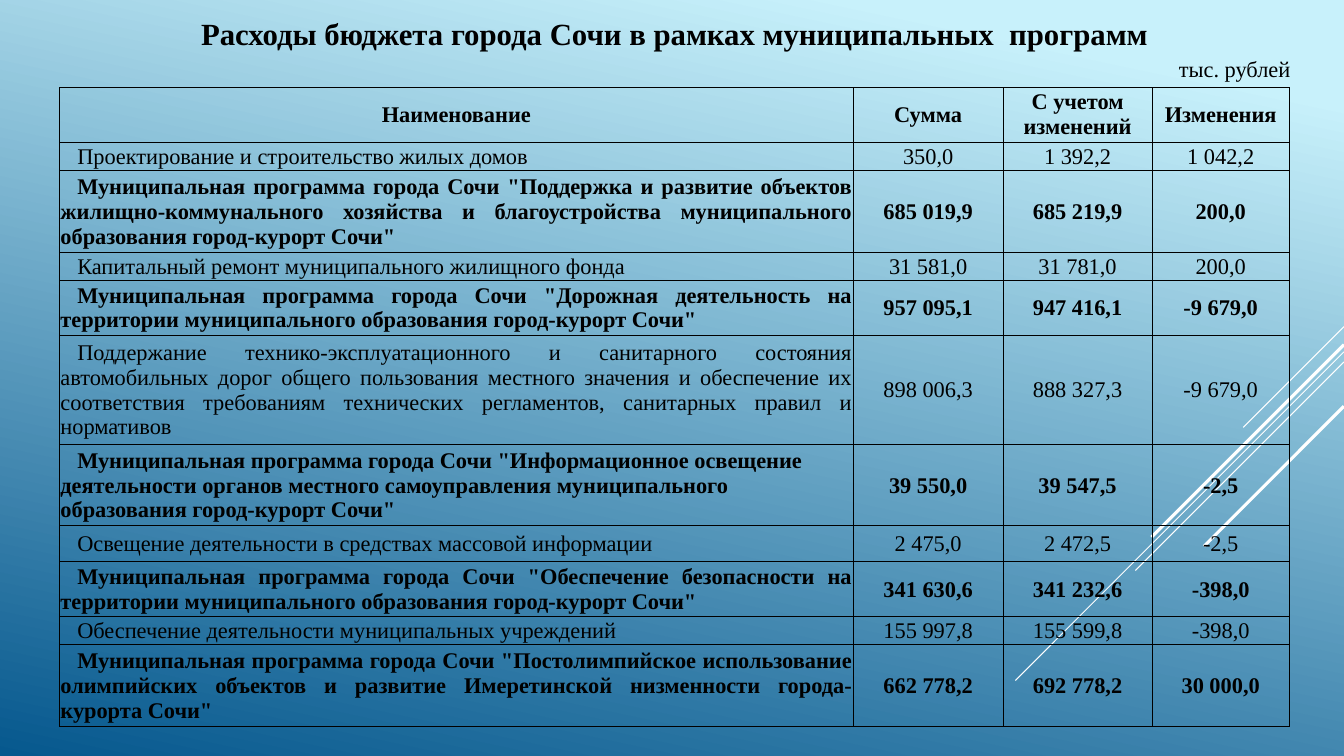
from dataclasses import dataclass

from lxml.etree import SubElement
from pptx import Presentation
from pptx.dml.color import RGBColor
from pptx.enum.shapes import MSO_CONNECTOR
from pptx.enum.text import MSO_ANCHOR, PP_ALIGN as Align
from pptx.oxml.ns import qn
from pptx.util import Pt


@dataclass(frozen=True)
class Theme:
    font: str = "Times New Roman"
    text: str = "000000"
    ray: str = "FFFFFF"
    sky: str = "C8F1FB"
    sea: str = "06588E"
    title_size: int = 22
    body_size: int = 16
    border: float = 0.5


THEME = Theme()
WIDTH, HEIGHT = 960, 540
COLUMNS = [567, 107, 106.5, 98]
HEADER = ["Наименование", "Сумма", "С учетом изменений", "Изменения"]
HEADER_HEIGHT = 39.3
RAYS = [(233.3, 72, 0.75), (251.3, 234.7, 0.75), (258.5, 149, 0.75),
        (246.2, 137.5, 2.25), (290.2, 100, 2.25)]
L, J = Align.LEFT, Align.JUSTIFY
ROWS = [
    (20, L, False, "Проектирование и строительство жилых домов",
     "350,0", "1 392,2", "1 042,2"),
    (58, J, True, 'Муниципальная программа города Сочи "Поддержка и развитие объектов '
     'жилищно-коммунального хозяйства и благоустройства муниципального '
     'образования город-курорт Сочи"', "685 019,9", "685 219,9", "200,0"),
    (20, J, False, "Капитальный ремонт муниципального жилищного фонда",
     "31 581,0", "31 781,0", "200,0"),
    (39.3, J, True, 'Муниципальная программа города Сочи "Дорожная деятельность на '
     'территории муниципального образования город-курорт Сочи"',
     "957 095,1", "947 416,1", "-9 679,0"),
    (78, J, False, "Поддержание технико-эксплуатационного и санитарного состояния "
     "автомобильных дорог общего пользования местного значения и обеспечение их "
     "соответствия требованиям технических регламентов, санитарных правил и "
     "нормативов", "898 006,3", "888 327,3", "-9 679,0"),
    (58, L, True, 'Муниципальная программа города Сочи "Информационное освещение '
     'деятельности органов местного самоуправления муниципального '
     'образования город-курорт Сочи"', "39 550,0", "39 547,5", "-2,5"),
    (25.7, L, False, "Освещение деятельности в средствах массовой информации",
     "2 475,0", "2 472,5", "-2,5"),
    (39.3, J, True, 'Муниципальная программа города Сочи "Обеспечение безопасности на '
     'территории муниципального образования город-курорт Сочи"',
     "341 630,6", "341 232,6", "-398,0"),
    (20, J, False, "Обеспечение деятельности муниципальных учреждений",
     "155 997,8", "155 599,8", "-398,0"),
    (58, J, True, 'Муниципальная программа города Сочи "Постолимпийское использование '
     'олимпийских объектов и развитие Имеретинской низменности города-курорта Сочи"',
     "662 778,2", "692 778,2", "30 000,0"),
]


def rgb(value):
    return RGBColor.from_string(value)


def write(tf, text, size, bold=False, align=Align.LEFT):
    tf.word_wrap = True
    p = tf.paragraphs[0]
    p.text = text
    p.alignment = align
    p.font.name = THEME.font
    p.font.size = Pt(size)
    p.font.bold = bold
    p.font.color.rgb = rgb(THEME.text)
    return p


def paint_background(s):
    fill = s.background.fill
    fill.gradient()
    fill.gradient_angle = 258
    stops = zip(fill.gradient_stops, [(0.1, THEME.sky), (1, THEME.sea)])
    for stop, (position, color) in stops:
        stop.position = position
        stop.color.rgb = rgb(color)


def add_ray(s, top, reach, weight):
    ray = s.shapes.add_connector(MSO_CONNECTOR.STRAIGHT, Pt(WIDTH), Pt(top),
                                 Pt(WIDTH - reach), Pt(top + reach))
    ray.line.color.rgb = rgb(THEME.ray)
    ray.line.width = Pt(weight)
    SubElement(ray._element.spPr, qn("a:effectLst"))


def set_title(s, text):
    title = s.shapes.title
    title.left, title.top, title.width, title.height = Pt(135.4), Pt(6.5), Pt(692.6), Pt(34)
    title.text_frame.vertical_anchor = MSO_ANCHOR.MIDDLE
    write(title.text_frame, text, THEME.title_size, True, Align.CENTER)


def add_label(s, text, left, top, width, height):
    box = s.shapes.add_textbox(Pt(left), Pt(top), Pt(width), Pt(height))
    write(box.text_frame, text, THEME.body_size)


def add_borders(cell):
    tc_pr = cell._tc.get_or_add_tcPr()
    for side in ("lnL", "lnR", "lnT", "lnB"):
        ln = SubElement(tc_pr, qn(f"a:{side}"), w=str(Pt(THEME.border)))
        fill = SubElement(ln, qn("a:solidFill"))
        SubElement(fill, qn("a:srgbClr"), val=THEME.text)


def fill_cell(cell, text, bold, align=Align.CENTER, inset=0.72):
    cell.margin_left = cell.margin_right = cell.margin_top = Pt(inset)
    cell.margin_bottom = 0
    cell.vertical_anchor = MSO_ANCHOR.MIDDLE
    add_borders(cell)
    cell.fill.background()
    return write(cell.text_frame, text, THEME.body_size, bold, align)


def add_budget_table(s, left, top):
    heights = [HEADER_HEIGHT] + [row[0] for row in ROWS]
    table = s.shapes.add_table(len(heights), len(COLUMNS), Pt(left), Pt(top),
                               Pt(sum(COLUMNS)), Pt(sum(heights))).table
    table.first_row = table.horz_banding = False
    for column, width in zip(table.columns, COLUMNS):
        column.width = Pt(width)
    for row, height in zip(table.rows, heights):
        row.height = Pt(height)
    for c, heading in enumerate(HEADER):
        fill_cell(table.cell(0, c), heading, True, inset=0)
    for r, (_, align, bold, name, *amounts) in enumerate(ROWS, 1):
        p = fill_cell(table.cell(r, 0), name, bold, align)
        p._p.get_or_add_pPr().set("indent", str(Pt(12)))
        for c, amount in enumerate(amounts, 1):
            fill_cell(table.cell(r, c), amount, bold)


def main():
    prs = Presentation()
    prs.slide_width, prs.slide_height = Pt(WIDTH), Pt(HEIGHT)
    s = prs.slides.add_slide(prs.slide_layouts[5])
    paint_background(s)
    for ray in RAYS:
        add_ray(s, *ray)
    set_title(s, "Расходы бюджета города Сочи в рамках муниципальных  программ")
    add_label(s, "тыс. рублей", 835, 36, 109, 26.6)
    add_budget_table(s, 42.5, 62.4)
    prs.save("out.pptx")


if __name__ == "__main__":
    main()
